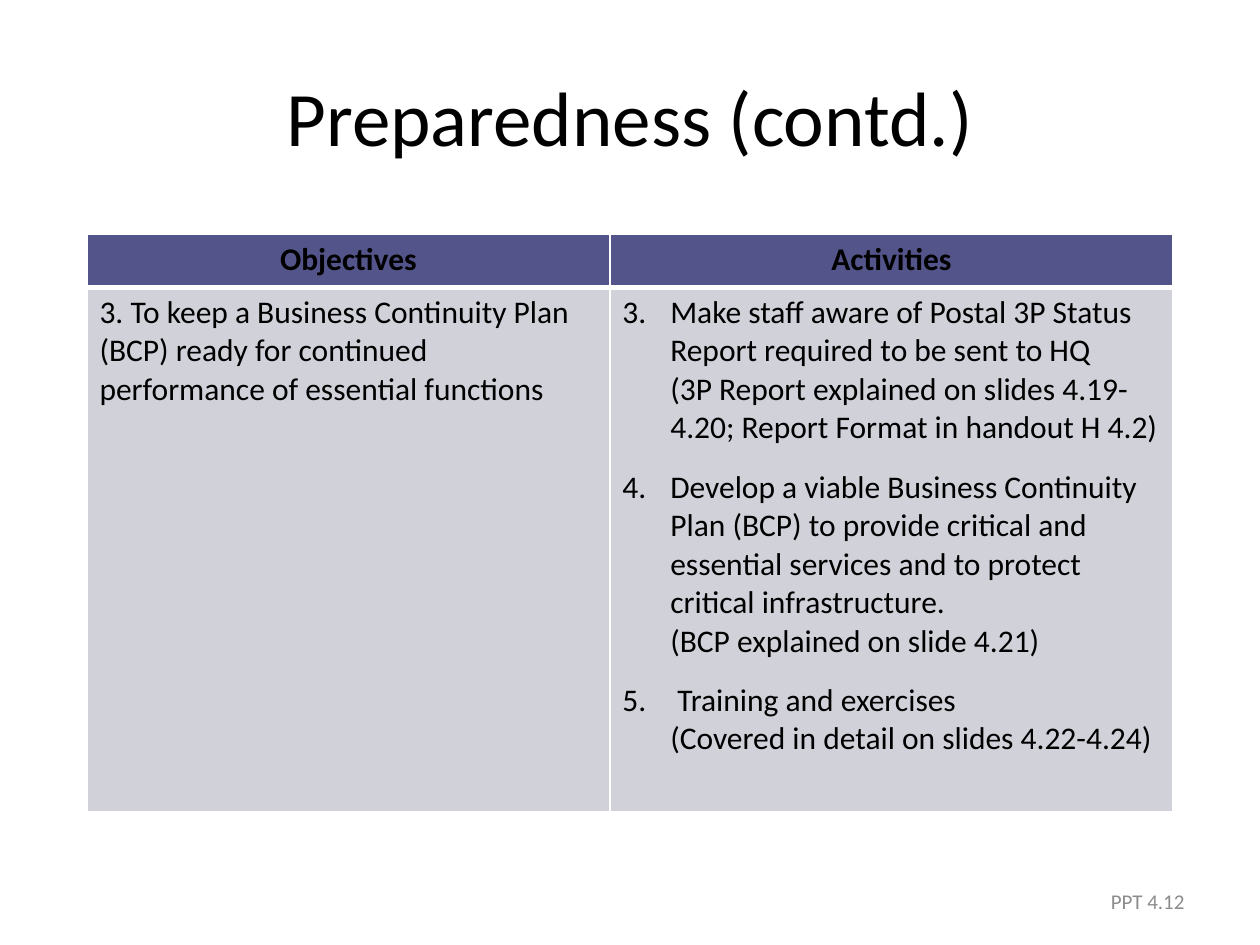
from pptx import Presentation
from pptx.dml.color import RGBColor
from pptx.enum.text import MSO_ANCHOR, PP_ALIGN
from pptx.oxml.ns import qn
from pptx.util import Inches, Pt
from lxml.etree import SubElement

BLACK = RGBColor(0, 0, 0)
WHITE = RGBColor(255, 255, 255)
GREY = RGBColor(0x8C, 0x8C, 0x8C)
INDIGO = RGBColor(0x53, 0x54, 0x8A)
PALE = RGBColor(0xD1, 0xD1, 0xDA)

HEADS = ["Objectives", "Activities"]
GOAL = ("3. To keep a Business Continuity Plan (BCP) ready for continued "
        "performance of essential functions")
TASKS = [
    "Make staff aware of Postal 3P Status Report required to be sent to HQ\v"
    "(3P Report explained on slides 4.19-4.20; Report Format in handout H 4.2)",
    "Develop a viable Business Continuity Plan (BCP) to provide critical and "
    "essential services and to protect critical infrastructure.\v"
    "(BCP explained on slide 4.21)",
    " Training and exercises\v(Covered in detail on slides 4.22-4.24)",
]
FIRST = 3


def style(para, size, color=BLACK, align=PP_ALIGN.LEFT, bold=False):
    para.alignment = align
    font = para.font
    font.name, font.size, font.bold = "Calibri", Pt(size), bold
    font.color.rgb = color


def add_label(slide, box, text, size, color, align):
    frame = slide.shapes.add_textbox(*box).text_frame
    frame.word_wrap = True
    frame.vertical_anchor = MSO_ANCHOR.MIDDLE
    para = frame.paragraphs[0]
    para.text = text
    style(para, size, color, align)


def number(para, start):
    props = para._p.get_or_add_pPr()
    props.set("marL", str(Inches(0.38)))
    props.set("indent", str(-Inches(0.38)))
    SubElement(props, qn("a:buFont"), typeface="+mj-lt")
    SubElement(props, qn("a:buAutoNum"), type="arabicPeriod", startAt=str(start))


def paint(cell, color, base):
    props = cell._tc.get_or_add_tcPr()
    for side, width in zip("LRTB", (1, 1, 1, base)):
        line = SubElement(props, qn("a:ln" + side), w=str(Pt(width)))
        fill = SubElement(line, qn("a:solidFill"))
        SubElement(fill, qn("a:srgbClr"), val=str(WHITE))
    cell.fill.solid()
    cell.fill.fore_color.rgb = color


def write(cell, lines, start=None):
    frame = cell.text_frame
    for i, text in enumerate(lines):
        para = frame.paragraphs[0] if i == 0 else frame.add_paragraph()
        para.text = text
        if start is not None:
            number(para, start)
        para.space_after = Pt(12)
        style(para, 18)


def add_plan(slide, box):
    table = slide.shapes.add_table(2, 2, *box).table
    for col, width in zip(table.columns, (4.15, 4.47)):
        col.width = Inches(width)
    for row, height in zip(table.rows, (0.42, 4.16)):
        row.height = Inches(height)
    for col, head in enumerate(HEADS):
        top = table.cell(0, col)
        paint(top, INDIGO, 3)
        paint(table.cell(1, col), PALE, 1)
        para = top.text_frame.paragraphs[0]
        para.text = head
        style(para, 18, align=PP_ALIGN.CENTER, bold=True)
    write(table.cell(1, 0), [GOAL])
    write(table.cell(1, 1), TASKS, FIRST)


def main():
    deck = Presentation()
    deck.slide_width, deck.slide_height = Inches(10), Inches(7.5)
    slide = deck.slides.add_slide(deck.slide_layouts[6])
    add_label(slide, (Inches(0.5), Inches(0.29), Inches(9), Inches(1.25)),
              "Preparedness (contd.)", 44, BLACK, PP_ALIGN.CENTER)
    add_plan(slide, (Inches(0.69), Inches(1.86), Inches(8.62), Inches(4.58)))
    add_label(slide, (Inches(7.17), Inches(6.95), Inches(2.33), Inches(0.4)),
              "PPT 4.12", 12, GREY, PP_ALIGN.RIGHT)
    deck.save("out.pptx")


if __name__ == "__main__":
    main()
